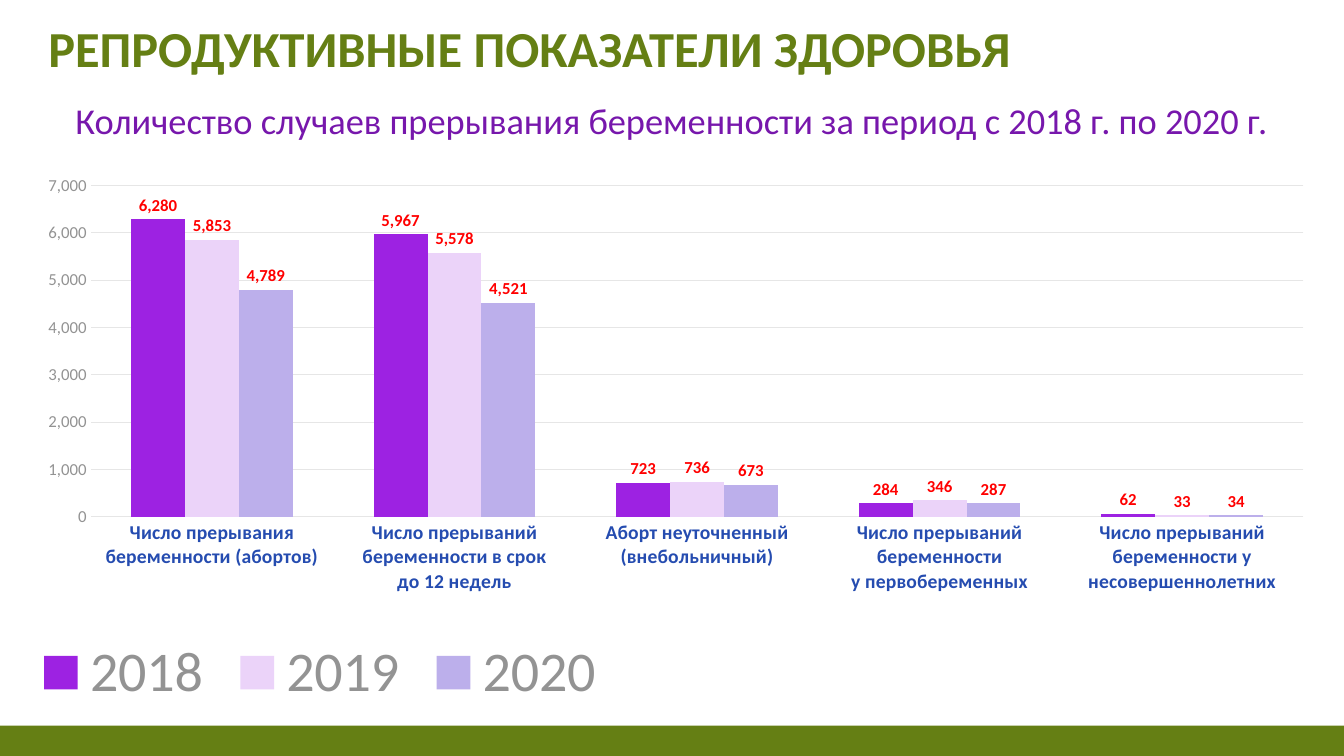
import pptx
import pptx.chart.data
import pptx.dml.color
import pptx.enum.chart
import pptx.enum.shapes
import pptx.enum.text
import pptx.oxml
import pptx.oxml.ns
import pptx.util

Inches = pptx.util.Inches
Pt = pptx.util.Pt
FONT = "Calibri"
HUES = {
    "green": "657F14", "violet": "7717AC", "blue": "254CB0", "red": "FF0000",
    "gray": "939393", "grid": "E6E6E6",
    "2018": "9D22E2", "2019": "EBD3F9", "2020": "BCAFEB",
}
CATS = [
    "Число прерывания беременности (абортов)",
    "Число прерываний беременности в срок\nдо 12 недель",
    "Аборт неуточненный (внебольничный)",
    "Число прерываний беременности\nу первобеременных",
    "Число прерываний беременности у несовершеннолетних",
]
YEARS = {
    "2018": (6280, 5967, 723, 284, 62),
    "2019": (5853, 5578, 736, 346, 33),
    "2020": (4789, 4521, 673, 287, 34),
}


def hue(name):
    return pptx.dml.color.RGBColor.from_string(HUES[name])


def style(font, size, color, bold=False):
    font.name, font.size, font.bold = FONT, Pt(size), bold
    font.color.rgb = hue(color)


def place(shape, box):
    shape.left, shape.top, shape.width, shape.height = map(Inches, box)


def write(shape, text, size, color, align, bold=False):
    frame = shape.text_frame
    frame.word_wrap = True
    frame.auto_size = pptx.enum.text.MSO_AUTO_SIZE.NONE
    par = frame.paragraphs[0]
    par.alignment = align
    run = par.add_run()
    run.text = text
    style(run.font, size, color, bold)
    return frame


def layout(x, y, w, h, inner=False):
    """Manual chart layout, as fractions of the chart's size."""
    target = '<c:layoutTarget val="inner"/>' if inner else ""
    modes = '<c:xMode val="edge"/><c:yMode val="edge"/>'
    sizes = "".join(f'<c:{tag} val="{val}"/>'
                    for tag, val in zip("xywh", (x, y, w, h)))
    return pptx.oxml.parse_xml(
        f'<c:layout {pptx.oxml.ns.nsdecls("c")}><c:manualLayout>'
        f"{target}{modes}{sizes}</c:manualLayout></c:layout>")


def add_band(slide, box):
    band = slide.shapes.add_shape(
        pptx.enum.shapes.MSO_SHAPE.RECTANGLE, *map(Inches, box))
    band.shadow.inherit = False
    band.fill.solid()
    band.fill.fore_color.rgb = hue("green")
    band.line.fill.background()


def add_heads(slide, box):
    x, y, w, h = box
    align = pptx.enum.text.PP_ALIGN
    # Title
    title = slide.shapes.title
    place(title, (x + 0.16, y, w - 0.17, 0.75))
    frame = write(title, "РЕПРОДУКТИВНЫЕ ПОКАЗАТЕЛИ ЗДОРОВЬЯ",
                  36, "green", align.LEFT, True)
    frame.vertical_anchor = pptx.enum.text.MSO_ANCHOR.BOTTOM
    # Subtitle
    sub = slide.shapes.add_textbox(
        *map(Inches, (x, y + h - 0.54, w, 0.54)))
    write(sub, "Количество случаев прерывания беременности "
          "за период с 2018 г. по 2020 г.", 26, "violet", align.CENTER)


def add_bars(slide, box):
    kinds = pptx.enum.chart
    data = pptx.chart.data.CategoryChartData(number_format="#,##0")
    data.categories = CATS
    for year, vals in YEARS.items():
        data.add_series(year, vals)
    chart = slide.shapes.add_chart(
        kinds.XL_CHART_TYPE.COLUMN_CLUSTERED, *map(Inches, box), data).chart
    chart.has_title = False
    chart.font.name, chart.font.size = FONT, Pt(10)

    # Bars and their labels
    plot = chart.plots[0]
    plot.gap_width, plot.overlap, plot.vary_by_categories = 150, 0, False
    for bar in plot.series:
        bar.format.fill.solid()
        bar.format.fill.fore_color.rgb = hue(bar.name)
        tags = bar.data_labels
        tags.show_value = True
        tags.number_format, tags.number_format_is_linked = "#,##0", False
        tags.position = kinds.XL_LABEL_POSITION.OUTSIDE_END
        style(tags.font, 12, "red", True)

    # Axes
    cat, val = chart.category_axis, chart.value_axis
    for axis in (cat, val):
        axis.major_tick_mark = kinds.XL_TICK_MARK.NONE
        axis.minor_tick_mark = kinds.XL_TICK_MARK.NONE
        axis.format.line.fill.background()
    style(cat.tick_labels.font, 14, "blue", True)
    style(val.tick_labels.font, 12, "gray")
    val.minimum_scale, val.maximum_scale, val.major_unit = 0, 7000, 1000
    val.tick_labels.number_format = "#,##0"
    val.tick_labels.number_format_is_linked = False
    grid = val.major_gridlines.format.line
    grid.color.rgb, grid.width = hue("grid"), Pt(0.75)

    # Legend
    chart.has_legend = True
    legend = chart.legend
    legend.position = kinds.XL_LEGEND_POSITION.BOTTOM
    legend.include_in_layout = False
    style(legend.font, 40, "gray")

    # Places of plot and legend
    root = chart.element
    area = root.find(".//" + pptx.oxml.ns.qn("c:plotArea"))
    for old in area.findall(pptx.oxml.ns.qn("c:layout")):
        area.remove(old)
    area.insert(0, layout(0.06, 0.018, 0.926, 0.598, inner=True))
    key = root.find(".//" + pptx.oxml.ns.qn("c:legend"))
    for old in key.findall(pptx.oxml.ns.qn("c:layout")):
        key.remove(old)
    key.insert(1, layout(0.01, 0.85, 0.45, 0.12))


def main():
    deck = pptx.Presentation()
    deck.slide_width, deck.slide_height = Inches(13.33), Inches(7.5)
    slide = deck.slides.add_slide(deck.slide_layouts[5])
    add_band(slide, (0, 7.2, 13.33, 0.3))
    add_heads(slide, (0.22, 0.07, 12.9, 1.39))
    add_bars(slide, (0.12, 1.74, 12.99, 5.5))
    deck.save("out.pptx")


if __name__ == "__main__":
    main()
